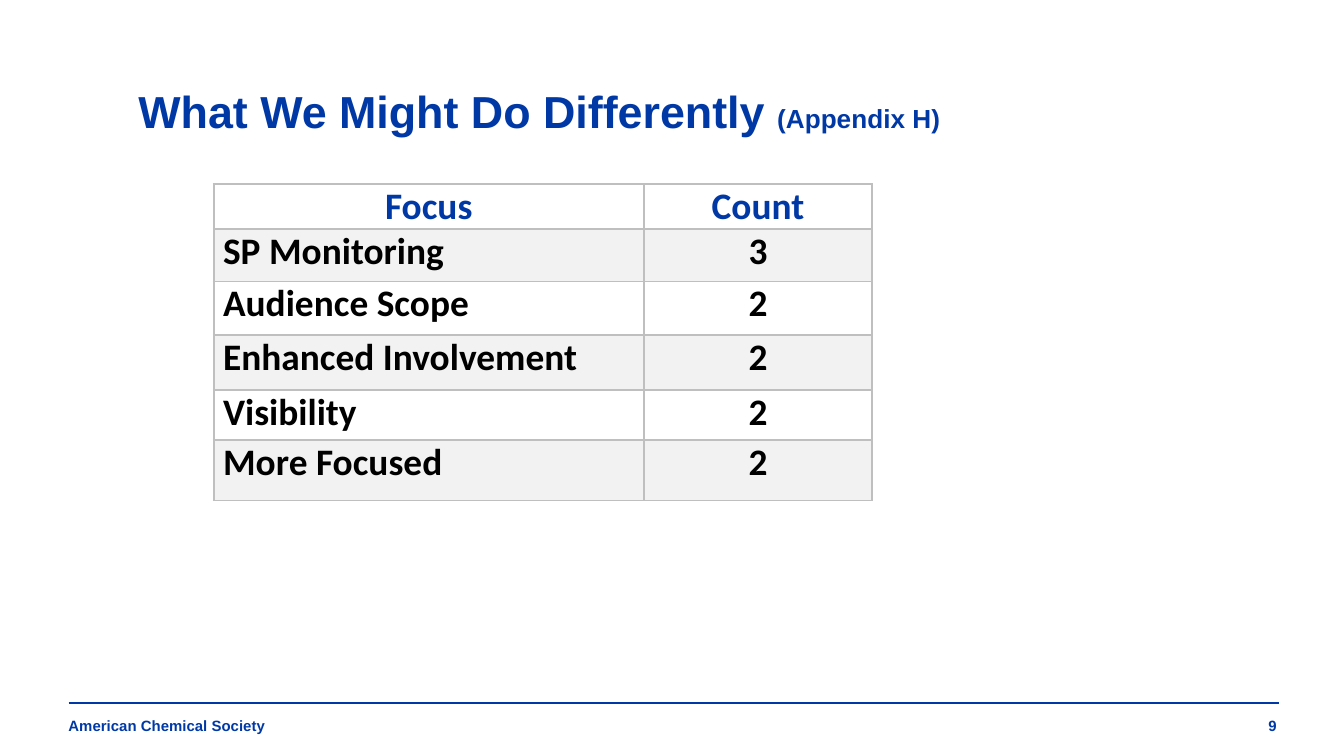
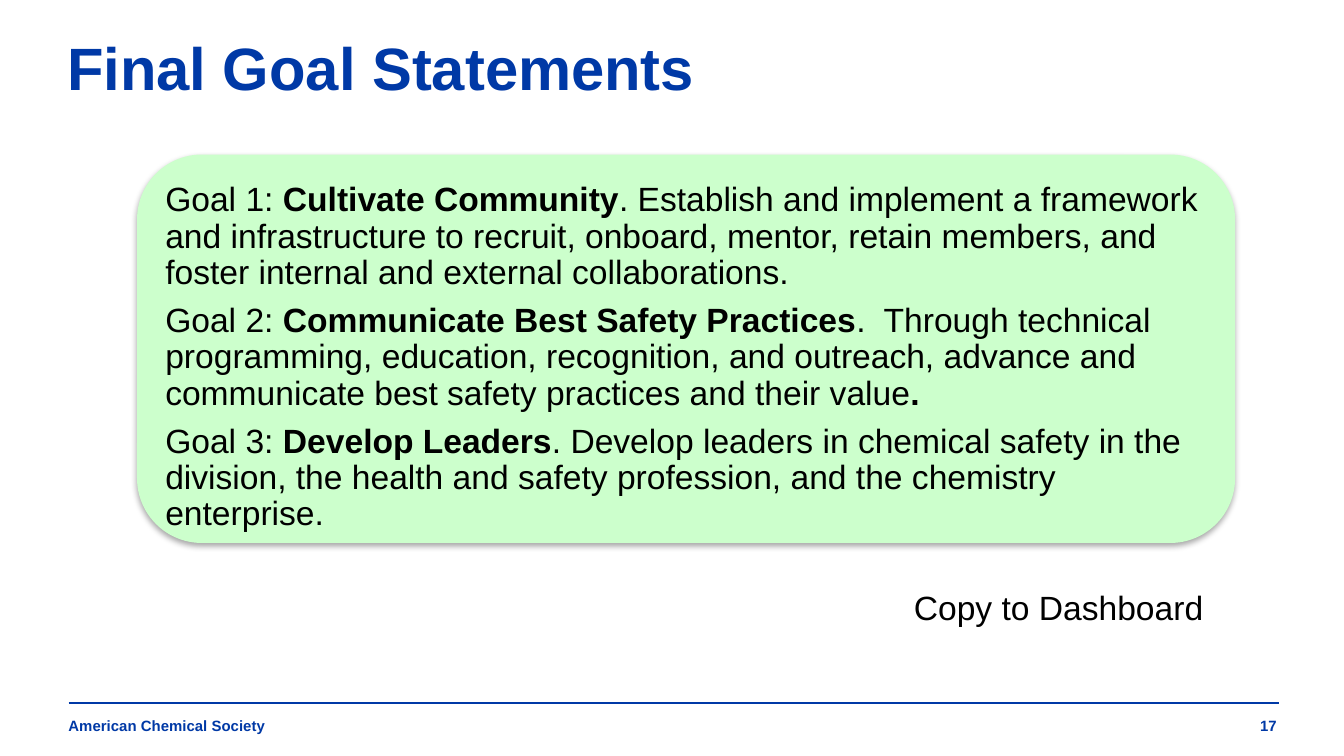
import dataclasses

import pptx
import pptx.dml.color
import pptx.enum.shapes
import pptx.enum.text
import pptx.oxml
import pptx.oxml.ns
import pptx.util

Inches = pptx.util.Inches
Pt = pptx.util.Pt
RGB = pptx.dml.color.RGBColor.from_string
ALIGN = pptx.enum.text.PP_ALIGN
ANCHOR = pptx.enum.text.MSO_ANCHOR
SHAPE = pptx.enum.shapes.MSO_SHAPE
NS = pptx.oxml.ns.nsdecls("a")


@dataclasses.dataclass(frozen=True)
class Theme:
    blue: str = "0039A6"
    black: str = "000000"
    stripe: str = "F2F2F2"
    border: str = "BFBFBF"
    panel: str = "CCFFCC"
    font: str = "Arial"
    table_font: str = "Calibri"
    title: int = 32
    long_title: int = 24
    title_note: int = 14
    table: int = 20
    body: int = 18
    footer: int = 8


THEME = Theme()

FOCUS_ROWS = [
    ("Focus", "Count"),
    ("SP Monitoring", "3"),
    ("Audience Scope", "2"),
    ("Enhanced Involvement", "2"),
    ("Visibility", "2"),
    ("More Focused", "2"),
]
FOCUS_COLS = (3.2, 1.7)
FOCUS_HEIGHTS = (0.33, 0.39, 0.4, 0.41, 0.37, 0.45)

GOALS = [
    [("Goal 1: ", False), ("Cultivate Community", True),
     (". Establish and implement a framework and infrastructure to recruit, onboard, "
      "mentor, retain members, and foster internal and external collaborations.", False)],
    [("Goal 2: ", False), ("Communicate Best Safety Practices", True),
     (".  Through technical programming, education, recognition, and outreach, "
      "advance and communicate best safety practices and their value", False), (".", True)],
    [("Goal 3: ", False), ("Develop Leaders", True),
     (". Develop leaders in chemical safety in the division, the health and safety "
      "profession, and the chemistry enterprise.", False)],
]


def apply(obj, values):
    for name, value in values.items():
        setattr(obj, name, value)


def add_run(p, text, size, color=THEME.black, bold=False, font=THEME.font):
    r = p.add_run()
    r.text = text
    apply(r.font, {"size": Pt(size), "bold": bold, "name": font})
    r.font.color.rgb = RGB(color)


def add_box(s, box, insets=(0, 0, 0, 0), wrap=True, anchor=ANCHOR.TOP):
    tf = s.shapes.add_textbox(*map(Inches, box)).text_frame
    sides = ("margin_left", "margin_top", "margin_right", "margin_bottom")
    apply(tf, dict(zip(sides, map(Inches, insets))))
    apply(tf, {"word_wrap": wrap, "vertical_anchor": anchor})
    return tf


def add_title(s, box, runs):
    tf = add_box(s, box, (0.5, 0, 0, 0), anchor=ANCHOR.BOTTOM)
    p = tf.paragraphs[0]
    p.line_spacing = 0.9
    for text, size in runs:
        add_run(p, text, size, THEME.blue, True)


def add_footer(s, box, number):
    x, y, w, h = box
    line = s.shapes.add_connector(
        pptx.enum.shapes.MSO_CONNECTOR.STRAIGHT,
        Inches(x), Inches(y), Inches(x + w), Inches(y))
    line.line.color.rgb = RGB(THEME.blue)
    line.line.width = Pt(0.75)
    line._element.spPr.append(pptx.oxml.parse_xml(f"<a:effectLst {NS}/>"))
    labels = [
        (x, 3.17, "American Chemical Society", ALIGN.LEFT),
        (x + w - 0.27, 0.25, str(number), ALIGN.RIGHT),
    ]
    for left, width, text, align in labels:
        p = add_box(s, (left, y + 0.1, width, h - 0.1)).paragraphs[0]
        p.alignment = align
        add_run(p, text, THEME.footer, THEME.blue, True)


def style_cell(cell, text, header, centred, striped):
    apply(cell, {"margin_left": Inches(0.07), "margin_right": Inches(0.07),
                 "margin_top": 0, "margin_bottom": 0})
    p = cell.text_frame.paragraphs[0]
    p.alignment = ALIGN.CENTER if centred else ALIGN.LEFT
    color = THEME.blue if header else THEME.black
    add_run(p, text, THEME.table, color, True, THEME.table_font)
    tcPr = cell._tc.get_or_add_tcPr()
    for side in ("lnL", "lnR", "lnT", "lnB"):
        tcPr.append(pptx.oxml.parse_xml(
            f'<a:{side} {NS} w="{Pt(1)}"><a:solidFill>'
            f'<a:srgbClr val="{THEME.border}"/></a:solidFill></a:{side}>'))
    if striped:
        cell.fill.solid()
        cell.fill.fore_color.rgb = RGB(THEME.stripe)
    else:
        cell.fill.background()


def add_focus_table(s, left, top):
    table = s.shapes.add_table(
        len(FOCUS_ROWS), len(FOCUS_COLS), Inches(left), Inches(top),
        Inches(sum(FOCUS_COLS)), Inches(sum(FOCUS_HEIGHTS))).table
    apply(table, {"first_row": False, "horz_banding": False})
    for col, width in zip(table.columns, FOCUS_COLS):
        col.width = Inches(width)
    for i, (values, height) in enumerate(zip(FOCUS_ROWS, FOCUS_HEIGHTS)):
        table.rows[i].height = Inches(height)
        for j, text in enumerate(values):
            style_cell(table.cell(i, j), text, i == 0, i == 0 or j == 1, i % 2 == 1)


def add_goal_panel(s, box):
    x, y, w, h = box
    sp = s.shapes.add_shape(SHAPE.ROUNDED_RECTANGLE, *map(Inches, box))
    sp.fill.solid()
    sp.fill.fore_color.rgb = RGB(THEME.panel)
    sp.line.fill.background()
    sp._element.spPr.append(pptx.oxml.parse_xml(
        f'<a:effectLst {NS}><a:outerShdw blurRad="{Pt(3)}" dist="{Pt(1.8)}" '
        f'dir="5400000" rotWithShape="0"><a:srgbClr val="{THEME.black}">'
        '<a:alpha val="35000"/></a:srgbClr></a:outerShdw></a:effectLst>'))
    pad = 0.14
    tf = add_box(s, (x + pad, y + pad, w - 2 * pad, h - 2 * pad), (0.07,) * 4)
    for i, goal in enumerate(GOALS):
        p = tf.add_paragraph() if i else tf.paragraphs[0]
        apply(p, {"line_spacing": 0.9, "space_after": Pt(0.35 * THEME.body)})
        for text, bold in goal:
            add_run(p, text, THEME.body, bold=bold)


def add_slide(prs, number):
    s = prs.slides.add_slide(prs.slide_layouts[6])
    add_footer(s, (0.51, 5.23, 9.01, 0.24), number)
    return s


def build_focus_slide(prs):
    s = add_slide(prs, 9)
    add_title(s, (0.53, 0.26, 6.68, 0.77), [
        ("What We Might Do Differently ", THEME.long_title),
        ("(Appendix H)", THEME.title_note)])
    add_focus_table(s, 1.59, 1.37)


def build_goals_slide(prs):
    s = add_slide(prs, 17)
    add_title(s, (0, 0, 6.14, 0.77), [("Final Goal Statements", THEME.title)])
    add_goal_panel(s, (1.02, 1.15, 8.17, 2.89))
    tf = add_box(s, (6.75, 4.32, 2.27, 0.4), (0.05,) * 4, wrap=False)
    add_run(tf.paragraphs[0], "Copy to Dashboard", THEME.body)


def main():
    prs = pptx.Presentation()
    apply(prs, {"slide_width": Inches(10), "slide_height": Inches(10 * 9 / 16)})
    build_focus_slide(prs)
    build_goals_slide(prs)
    prs.save("out.pptx")


if __name__ == "__main__":
    main()
